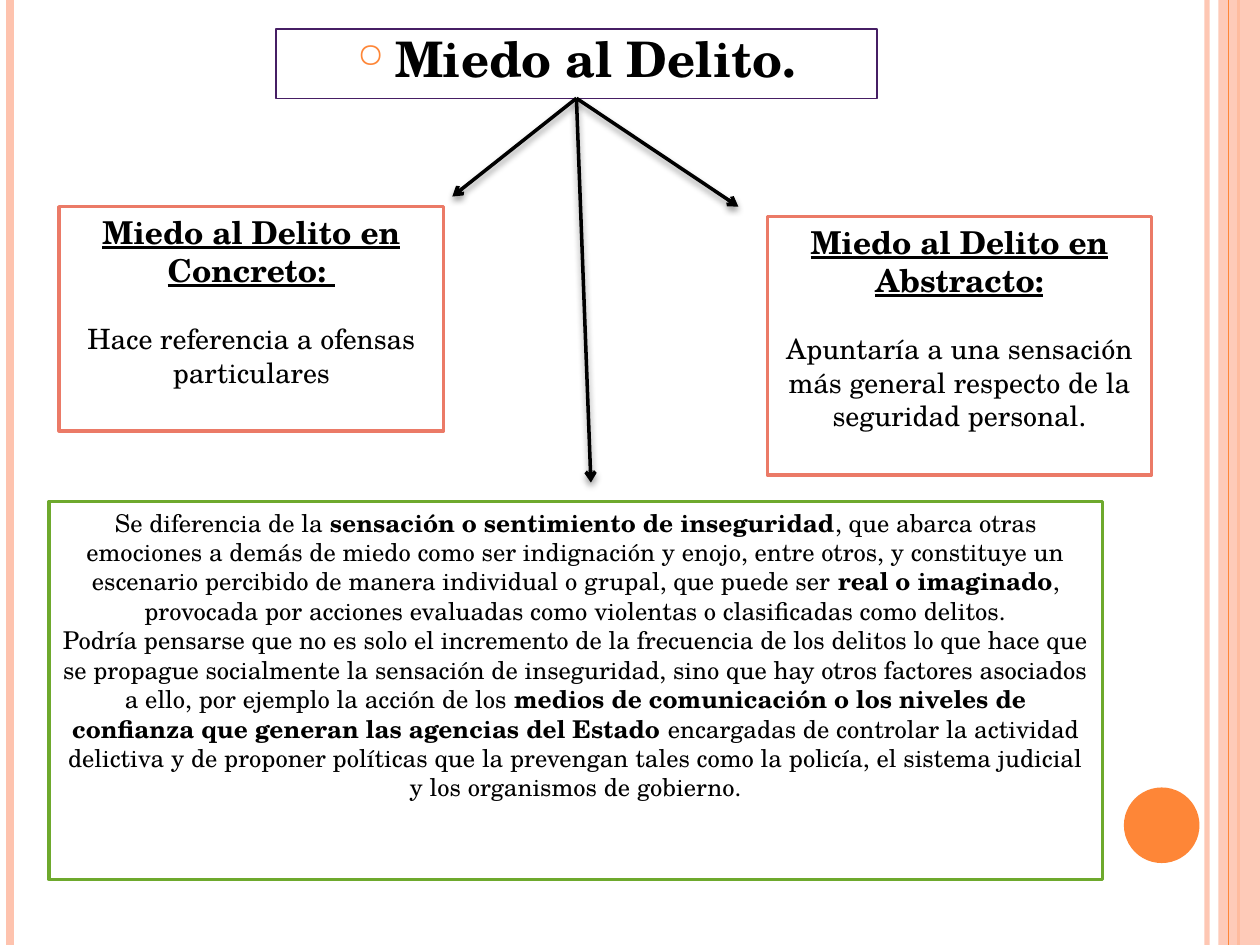
from dataclasses import dataclass
from lxml import etree
from pptx import Presentation
from pptx.dml.color import RGBColor
from pptx.enum.shapes import MSO_CONNECTOR, MSO_SHAPE
from pptx.enum.text import MSO_ANCHOR, MSO_AUTO_SIZE, PP_ALIGN
from pptx.oxml import parse_xml
from pptx.oxml.ns import nsdecls, qn
from pptx.util import Inches, Pt

STRAIGHT = MSO_CONNECTOR.STRAIGHT
RECT = MSO_SHAPE.RECTANGLE
OVAL = MSO_SHAPE.OVAL
TOP = MSO_ANCHOR.TOP
MIDDLE = MSO_ANCHOR.MIDDLE
NO_FIT = MSO_AUTO_SIZE.NONE
CENTER = PP_ALIGN.CENTER

FONT = "TeX Gyre Schola"
BLACK = RGBColor(0x00, 0x00, 0x00)
WHITE = RGBColor(0xFF, 0xFF, 0xFF)
PEACH = RGBColor(0xFE, 0xC3, 0xAE)
ORANGE = RGBColor(0xFE, 0x86, 0x37)
PURPLE = RGBColor(0x46, 0x1E, 0x64)
CORAL = RGBColor(0xEB, 0x7A, 0x67)
GREEN = RGBColor(0x6E, 0xA9, 0x2D)


@dataclass
class Run:
    text: str
    bold: bool = False
    under: bool = False


@dataclass
class Para:
    runs: list[Run]
    size: int
    before: int = 0


@dataclass
class Box:
    left: float
    top: float
    width: float
    height: float
    color: RGBColor
    paras: list[Para]


@dataclass
class Stripe:
    x: float
    color: RGBColor
    width: float
    alpha: int = 100


def fade(fill, alpha: int) -> None:
    color = fill._xPr.find(qn("a:solidFill"))[0]
    etree.SubElement(color, qn("a:alpha")).set("val", str(alpha * 1000))


def add_line(slide, start: tuple, end: tuple, color: RGBColor, width: float):
    line = slide.shapes.add_connector(STRAIGHT, *map(Inches, start + end))
    line.line.color.rgb = color
    line.line.width = Pt(width)
    return line


def draw_stripe(slide, stripe: Stripe) -> None:
    line = add_line(slide, (stripe.x, 0), (stripe.x, 7.5), stripe.color, stripe.width)
    if stripe.alpha < 100:
        fade(line.line.fill, stripe.alpha)
    etree.SubElement(line._element.spPr, qn("a:effectLst"))


def draw_arrow(slide, title, end: tuple) -> None:
    arrow = add_line(slide, (4.57, 0.78), end, BLACK, 2)
    arrow.begin_connect(title, 2)
    props = arrow._element.spPr
    etree.SubElement(props.find(qn("a:ln")), qn("a:tailEnd")).set("type", "arrow")
    props.append(parse_xml(
        f'<a:effectLst {nsdecls("a")}><a:outerShdw blurRad="{Pt(4)}" dist="{Pt(2)}" '
        'dir="5400000" rotWithShape="0"><a:srgbClr val="000000"><a:alpha val="40000"/>'
        '</a:srgbClr></a:outerShdw></a:effectLst>'))


def add_solid(slide, kind, place: tuple, color: RGBColor):
    shape = slide.shapes.add_shape(kind, *map(Inches, place))
    shape.shadow.inherit = False
    shape.fill.solid()
    shape.fill.fore_color.rgb = color
    shape.line.fill.background()
    return shape


def add_run(para, run: Run, size: int) -> None:
    part = para.add_run()
    part.text = run.text
    font = part.font
    font.name = FONT
    font.size = Pt(size)
    font.bold = run.bold
    font.underline = run.under
    font.color.rgb = BLACK


def draw_box(slide, box: Box) -> None:
    shape = add_solid(slide, RECT, (box.left, box.top, box.width, box.height), WHITE)
    shape.line.color.rgb = box.color
    shape.line.width = Pt(2)
    frame = shape.text_frame
    frame.word_wrap = True
    frame.vertical_anchor = TOP
    for i, item in enumerate(box.paras):
        para = frame.add_paragraph() if i else frame.paragraphs[0]
        para.alignment = CENTER
        para.space_before = Pt(item.before)
        for run in item.runs:
            add_run(para, run, item.size)


def draw_title(slide, text: str):
    title = slide.shapes.title
    title.left, title.top = Inches(2.19), Inches(0.23)
    title.width, title.height = Inches(4.77), Inches(0.55)
    title.line.color.rgb = PURPLE
    title.line.width = Pt(0.75)
    frame = title.text_frame
    frame.auto_size = NO_FIT
    frame.word_wrap = True
    frame.vertical_anchor = MIDDLE
    para = frame.paragraphs[0]
    para.alignment = CENTER
    para.line_spacing = 0.8
    para.space_before = Pt(6)
    props = para._p.get_or_add_pPr()
    props.set("marL", str(Inches(0.3)))
    props.set("indent", str(Inches(-0.3)))
    tint = etree.SubElement(props, qn("a:buClr"))
    etree.SubElement(tint, qn("a:srgbClr")).set("val", str(ORANGE))
    etree.SubElement(props, qn("a:buSzPct")).set("val", "70000")
    etree.SubElement(props, qn("a:buChar")).set("char", "○")
    add_run(para, Run(text, bold=True), 28)
    return title


def fear_box(left: float, top: float, height: float, head: str, body: str) -> Box:
    return Box(left, top, 3.05, height, CORAL, [
        Para([Run(head, bold=True, under=True)], 18),
        Para([Run(body)], 16, before=19),
    ])


STRIPES = [
    Stripe(9.58, PEACH, 3, 93),
    Stripe(0.08, PEACH, 4.5),
    Stripe(9.83, ORANGE, 1.5),
]
EDGE = Stripe(9.75, ORANGE, 0.75)
BOXES = [
    fear_box(0.47, 1.64, 1.78, "Miedo al Delito en Concreto: ",
             "Hace referencia a ofensas particulares"),
    fear_box(6.09, 1.72, 2.05, "Miedo al Delito en Abstracto:",
             "Apuntaría a una sensación más general respecto de la seguridad personal."),
    Box(0.39, 3.98, 8.36, 3, GREEN, [
        Para([
            Run("Se diferencia de la "),
            Run("sensación o sentimiento de inseguridad", bold=True),
            Run(", que abarca otras emociones a demás de miedo como ser indignación y enojo, "
                "entre otros, y constituye un escenario percibido de manera individual o "
                "grupal, que puede ser "),
            Run("real o imaginado", bold=True),
            Run(", provocada por acciones evaluadas como violentas o clasificadas como delitos."),
        ], 14),
        Para([
            Run("Podría pensarse que no es solo el incremento de la frecuencia de los delitos "
                "lo que hace que se propague socialmente la sensación de inseguridad, sino que "
                "hay otros factores asociados a ello, por ejemplo la acción de los "),
            Run("medios de comunicación o los niveles de confianza que generan las agencias "
                "del Estado ", bold=True),
            Run("encargadas de controlar la actividad delictiva y de proponer políticas que la "
                "prevengan tales como la policía, el sistema judicial y los organismos de "
                "gobierno."),
        ], 14),
    ]),
]
TIPS = [(3.59, 1.56), (5.86, 1.64), (4.69, 3.83)]


def main() -> None:
    deck = Presentation()
    deck.slide_width, deck.slide_height = Inches(10), Inches(7.5)
    slide = deck.slides.add_slide(deck.slide_layouts[5])
    for stripe in STRIPES:
        draw_stripe(slide, stripe)
    band = add_solid(slide, RECT, (9.67, 0, 0.33, 7.5), PEACH)
    fade(band.fill, 87)
    draw_stripe(slide, EDGE)
    add_solid(slide, OVAL, (8.92, 6.25, 0.6, 0.6), ORANGE)
    title = draw_title(slide, "Miedo al Delito.")
    for box in BOXES:
        draw_box(slide, box)
    for tip in TIPS:
        draw_arrow(slide, title, tip)
    deck.save("out.pptx")


if __name__ == "__main__":
    main()
